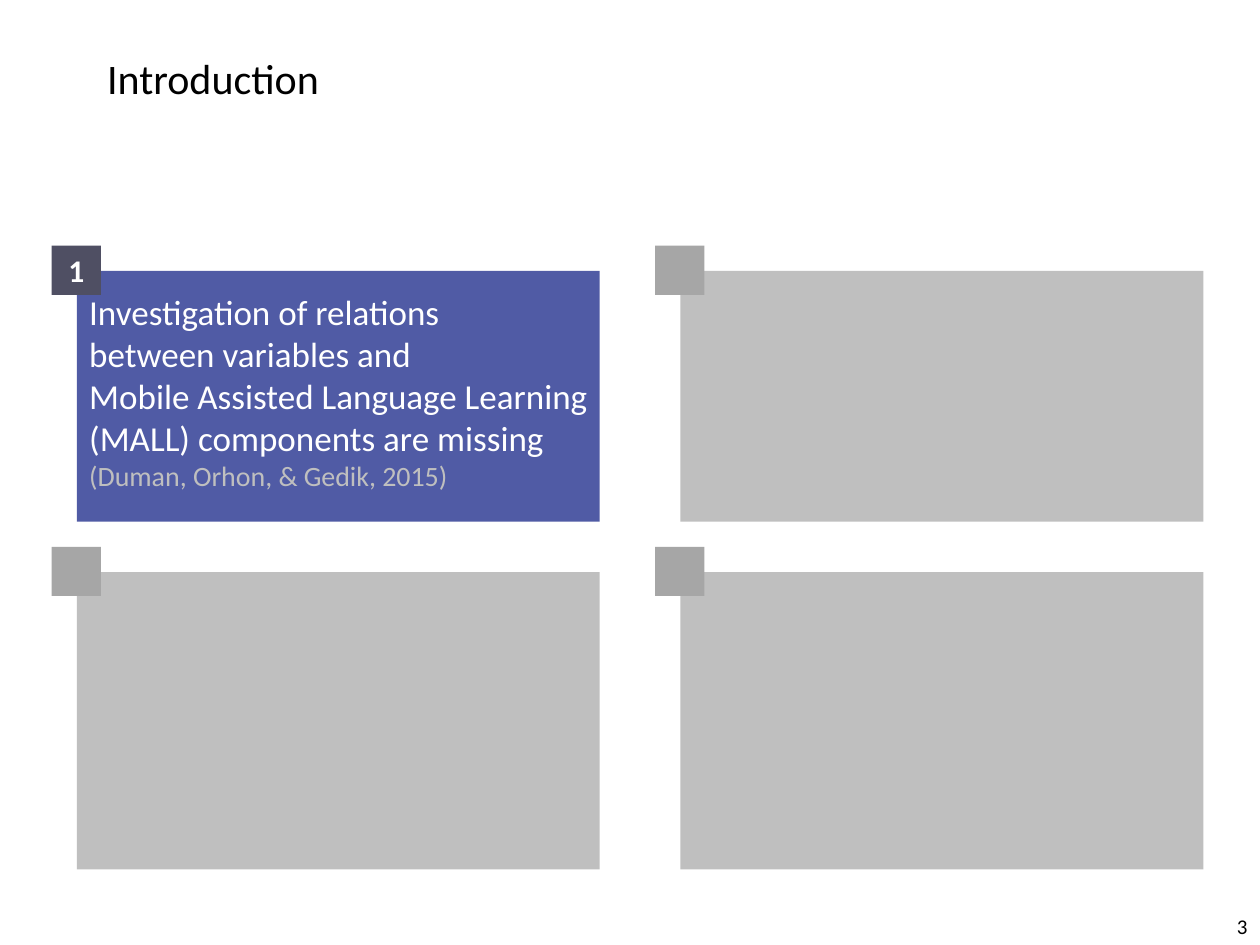
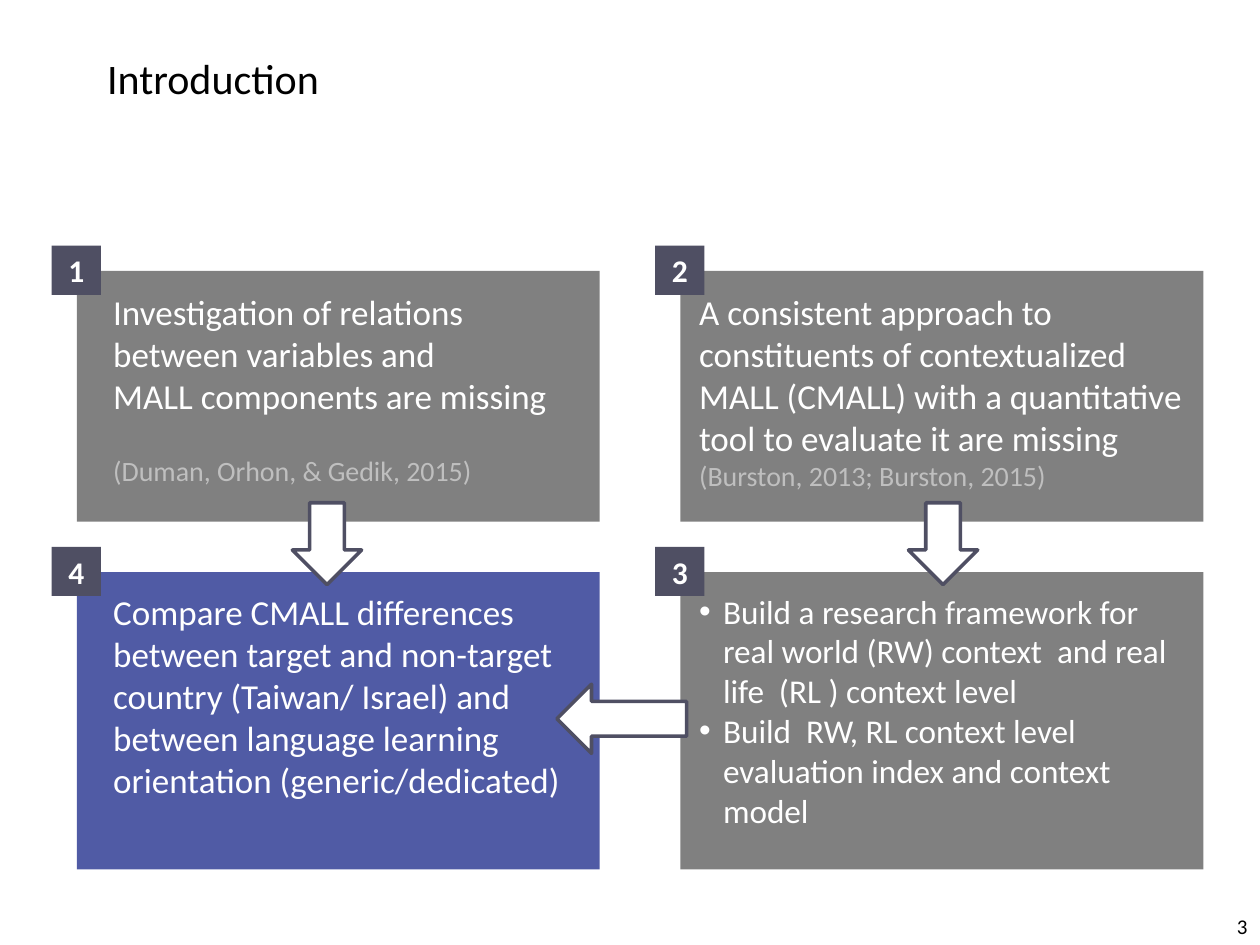
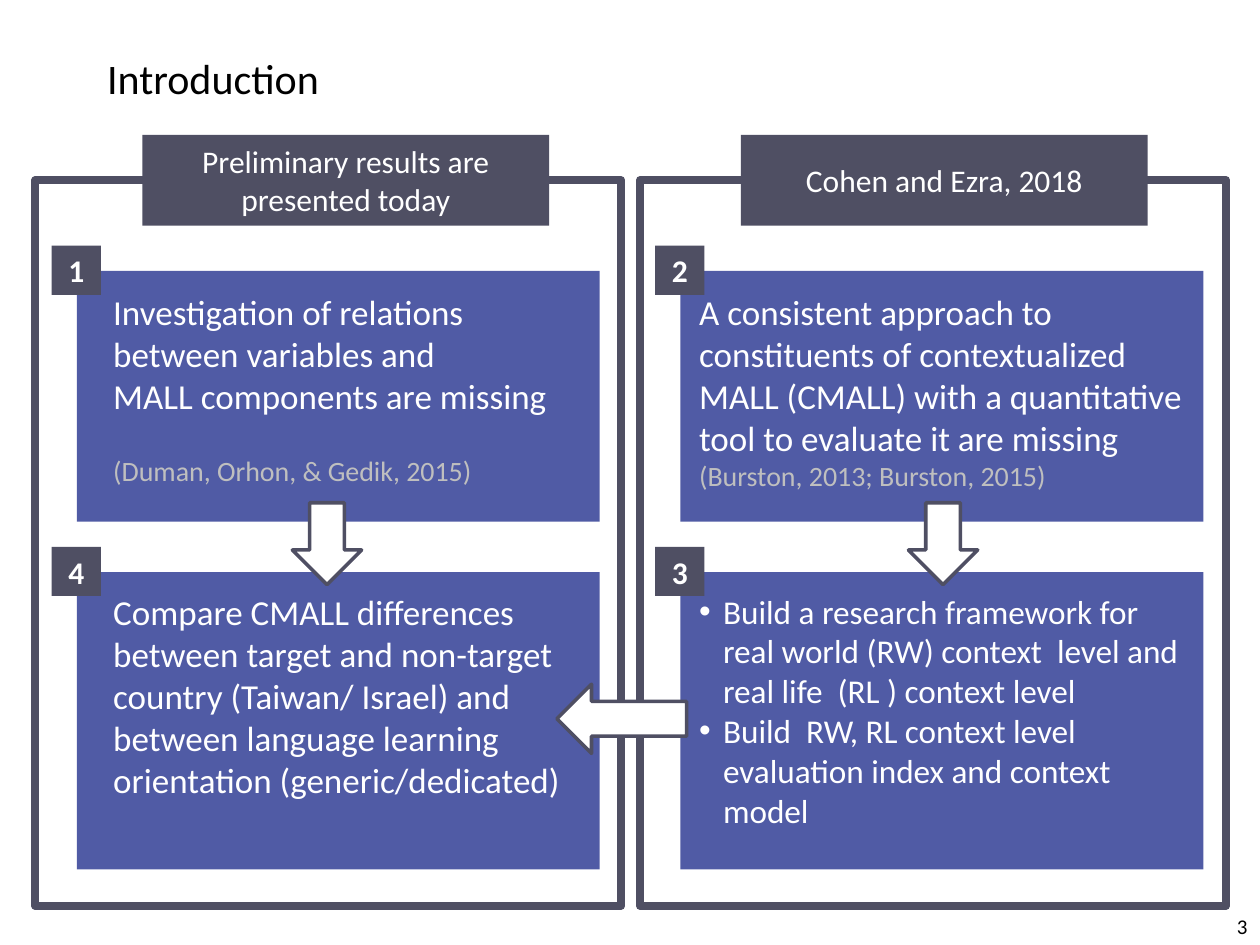
from lxml import etree
from pptx import Presentation
from pptx.dml.color import RGBColor
from pptx.enum.shapes import MSO_SHAPE
from pptx.enum.text import MSO_ANCHOR, MSO_AUTO_SIZE, PP_ALIGN
from pptx.oxml.ns import qn
from pptx.util import Inches, Pt

RECT, DOWN, LEFT = MSO_SHAPE.RECTANGLE, MSO_SHAPE.DOWN_ARROW, MSO_SHAPE.LEFT_ARROW
TOP, MIDDLE = MSO_ANCHOR.TOP, MSO_ANCHOR.MIDDLE
ALIGN_LEFT, CENTER, ALIGN_RIGHT = PP_ALIGN.LEFT, PP_ALIGN.CENTER, PP_ALIGN.RIGHT
NO_AUTOFIT = MSO_AUTO_SIZE.NONE

FONT = "Calibri"
COLORS = {
    "active": "505BA5", "done": "808080", "empty": "BFBFBF",
    "empty_badge": "A6A6A6", "dark": "4F4F63", "cite": "BFBFBF",
    "white": "FFFFFF", "black": "000000",
}

# Card grid
CARD_X, CARD_PITCH, CARD_W = 0.61, 4.79, 4.15
CARD_ROWS = [(2.15, 1.99, 0.11), (4.54, 2.36, 0.1)]  # top, height, text offset
BADGE, BADGE_OFFSET = 0.39, 0.2
INSETS = [(0.19, 3.88), (0.05, 4.09)]  # text offset and width by column
WIDE_INSET = (0, 4.2)
CELLS = {1: (0, 0), 2: (1, 0), 3: (1, 1), 4: (0, 1)}  # column, row

# Card contents: (text, kind of paragraph, space before in points)
MISSING_FULL = [
    ("Investigation of relations \vbetween variables and \v"
     "Mobile Assisted Language Learning (MALL) components are missing ", "plain", 0),
    ("(Duman, Orhon, & Gedik, 2015)", "cite", 0),
]
MISSING = [
    ("Investigation of relations \vbetween variables and \v"
     "MALL components are missing", "plain", 0),
    ("(Duman, Orhon, & Gedik, 2015)", "cite", 21),
]
APPROACH = [
    ("A consistent approach to constituents of contextualized MALL (CMALL) "
     "with a quantitative tool to evaluate it are missing ", "plain", 0),
    ("(Burston, 2013; Burston, 2015)", "cite", 0),
]
COMPARE = [
    ("Compare CMALL differences between target and non-target country "
     "(Taiwan/ Israel) and between language learning orientation "
     "(generic/dedicated)", "plain", 0),
]
STYLES = {"plain": (20, "white"), "cite": (16, "cite"), "bullet": (19, "white")}


def framework(levels):
    return [
        (f"Build a research framework for {levels}", "bullet", 0),
        ("Build  RW, RL context level evaluation index and context model", "bullet", 0),
    ]


def rgb(name):
    return RGBColor.from_string(COLORS[name])


def style(p, size, color, bold=False, align=ALIGN_LEFT):
    p.alignment = align
    for r in p.runs:
        r.font.name, r.font.size, r.font.bold = FONT, Pt(size), bold
        r.font.color.rgb = rgb(color)


def add_bullet(p):
    pPr = p._p.get_or_add_pPr()
    pPr.set("marL", str(Inches(0.19)))
    pPr.set("indent", str(-Inches(0.19)))
    etree.SubElement(pPr, qn("a:buFont"), typeface="Arial")
    etree.SubElement(pPr, qn("a:buChar"), char="•")


def add_block(s, kind, x, y, w, h, fill=None, line=None, text="", size=18, bold=False):
    sp = s.shapes.add_shape(kind, Inches(x), Inches(y), Inches(w), Inches(h))
    sp.shadow.inherit = False
    if fill:
        sp.fill.solid()
        sp.fill.fore_color.rgb = rgb(fill)
    else:
        sp.fill.background()
    if line:
        sp.line.color.rgb = rgb("dark")
        sp.line.width = Pt(line)
    else:
        sp.line.fill.background()
    if text:
        tf = sp.text_frame
        tf.text, tf.vertical_anchor = text, MIDDLE
        style(tf.paragraphs[0], size, "white", bold, CENTER)


def add_card(s, number, content=None, fill="empty", inset=None):
    """Card with a numbered badge on its corner and optional text."""
    col, row = CELLS[number]
    x = CARD_X + col * CARD_PITCH
    y, h, dy = CARD_ROWS[row]
    add_block(s, RECT, x, y, CARD_W, h, fill)
    if content:
        dx, w = inset or INSETS[col]
        add_card_text(s, x + dx, y + dy, w, h - 2 * dy, content)
    add_block(s, RECT, x - BADGE_OFFSET, y - BADGE_OFFSET, BADGE, BADGE,
              "dark" if content else "empty_badge",
              text=str(number) if content else "", bold=True)


def add_card_text(s, x, y, w, h, content):
    tf = s.shapes.add_textbox(Inches(x), Inches(y), Inches(w), Inches(h)).text_frame
    tf.word_wrap = True
    for i, (text, kind, space) in enumerate(content):
        p = tf.paragraphs[0] if i == 0 else tf.add_paragraph()
        p.text = text
        if space:
            p.space_before = Pt(space)
        if kind == "bullet":
            add_bullet(p)
        style(p, *STYLES[kind])


def add_arrows(s):
    """Flow from card 2 to 3, 1 to 4 and 3 to 4."""
    for kind, x, y, w, h in [(DOWN, 7.21, 3.99, 0.55, 0.65),
                             (DOWN, 2.32, 3.99, 0.55, 0.65),
                             (LEFT, 4.42, 5.43, 1.03, 0.55)]:
        add_block(s, kind, x, y, w, h, "white", line=2)


def add_frame(s, x, header, header_dx):
    """Outline round one column with a header on its top edge."""
    y = 1.43
    add_block(s, RECT, x, y, 4.65, 5.76, line=4.5)
    add_block(s, RECT, x + header_dx, y - 0.36, 3.23, 0.72, "dark", text=header)


def new_slide(prs):
    """Slide with the shared title and page number."""
    s = prs.slides.add_slide(prs.slide_layouts[5])
    title = s.shapes.title
    title.left, title.top = Inches(0.75), Inches(0.37)
    title.width, title.height = Inches(1.9), Inches(0.5)
    tf = title.text_frame
    tf.text, tf.vertical_anchor = "Introduction", TOP
    tf.word_wrap, tf.auto_size = False, NO_AUTOFIT
    style(tf.paragraphs[0], 24, "black")

    page = s.shapes.add_textbox(Inches(9.71), Inches(7.2), Inches(0.29), Inches(0.3))
    page.text_frame.text = "3"
    page.text_frame.word_wrap = False
    style(page.text_frame.paragraphs[0], 12, "black", align=ALIGN_RIGHT)
    return s


def first_gap_slide(prs):
    s = new_slide(prs)
    add_card(s, 1, MISSING_FULL, "active", WIDE_INSET)
    for number in (2, 4, 3):
        add_card(s, number)


def flow_slide(prs, levels, fills):
    s = new_slide(prs)
    contents = [MISSING, APPROACH, framework(levels), COMPARE]
    for number, (content, fill) in enumerate(zip(contents, fills), 1):
        add_card(s, number, content, fill)
    return s


def main():
    prs = Presentation()
    prs.slide_width, prs.slide_height = Inches(10), Inches(7.5)

    first_gap_slide(prs)

    s = flow_slide(prs, "real world (RW) context  and real life  (RL ) context level",
                   ["done"] * 3 + ["active"])
    add_arrows(s)

    s = flow_slide(prs, "real world (RW) context  level and real life  (RL ) context level",
                   ["active"] * 4)
    add_frame(s, 0.28, "Preliminary results are presented today", 0.85)
    add_frame(s, 5.08, "Cohen and Ezra, 2018", 0.8)
    add_arrows(s)

    prs.save("out.pptx")


if __name__ == "__main__":
    main()
